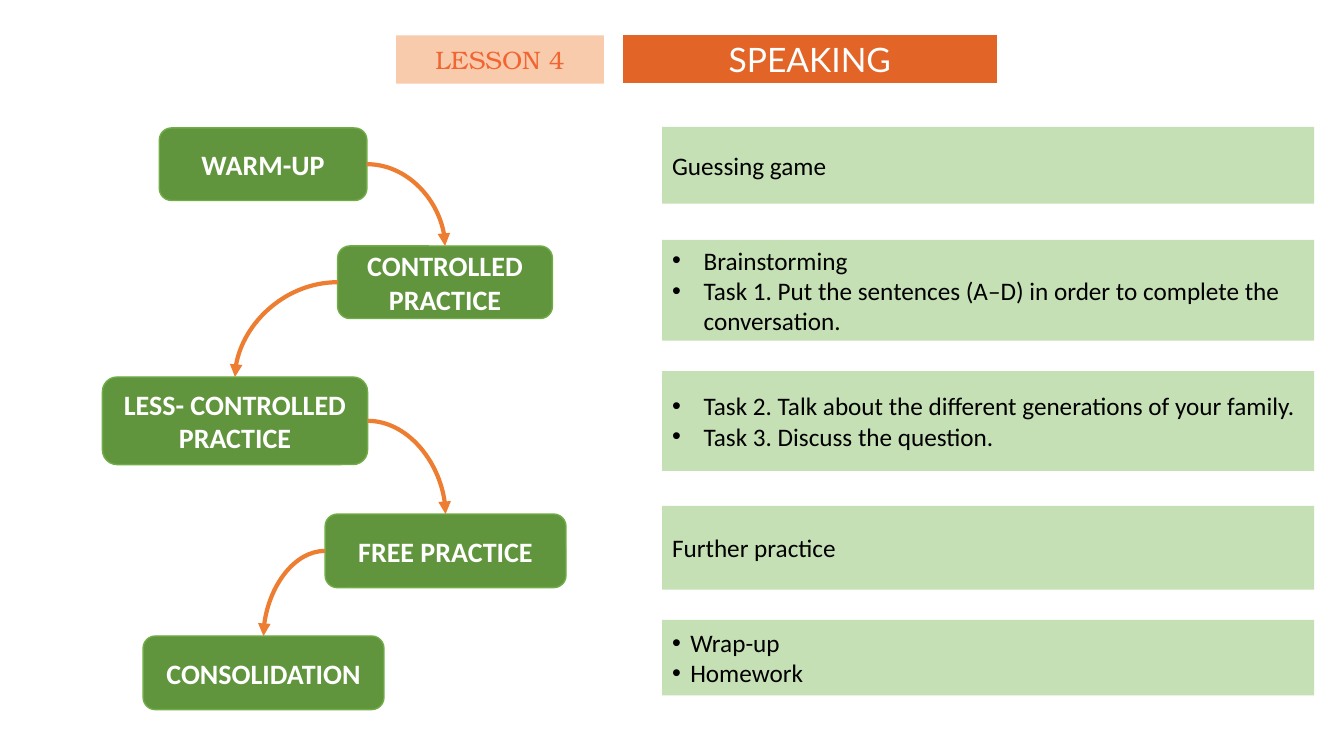
"""Build the Lesson 4 speaking overview slide."""
from dataclasses import dataclass
from itertools import pairwise

from pptx import Presentation
from pptx.dml.color import RGBColor as RGB
from pptx.enum.shapes import MSO_CONNECTOR as CONN, MSO_SHAPE as SHAPE
from pptx.enum.text import MSO_ANCHOR as ANCHOR, MSO_AUTO_SIZE as AUTO, PP_ALIGN as ALIGN
from pptx.oxml.ns import qn
from pptx.shapes.autoshape import Shape
from pptx.slide import Slide
from pptx.util import Pt
from lxml.etree import SubElement


@dataclass(frozen=True)
class Font:
    name: str
    size: float
    color: str
    bold: bool = False


@dataclass(frozen=True)
class Theme:
    step_fill: str = "61953D"
    step_line: str = "70AD47"
    card_fill: str = "C5E0B4"
    arrow: str = "ED7D31"
    title_fill: str = "E36427"
    title_line: str = "FFFFFF"
    lesson_fill: str = "F8CBAD"
    step: Font = Font("Calibri", 20, "FFFFFF", True)
    card: Font = Font("Calibri", 18, "000000")
    title: Font = Font("Lato", 24, "FFFFFF")
    lesson: Font = Font("TeX Gyre Bonum", 18, "F26532")


@dataclass(frozen=True)
class Box:
    left: float
    top: float
    width: float
    height: float


@dataclass(frozen=True)
class Stage:
    name: str
    box: Box
    card_top: float
    card_height: float
    lines: tuple[str, ...]
    hang: float = 0


THEME = Theme()
CARD_LEFT, CARD_WIDTH = 473, 465.8
LESSON_BOX = Box(283, 25.2, 148.3, 34.6)
TITLE_BOX = Box(444.2, 24.5, 268.6, 35.3)
STAGES = (
    Stage("WARM-UP", Box(113.8, 91.4, 148.3, 51.8), 90.7, 54.7, ("Guessing game",)),
    Stage("CONTROLLED PRACTICE", Box(241.2, 175.7, 153.4, 51.8), 171.4, 72,
          ("Brainstorming",
           "Task 1. Put the sentences (A–D) in order to complete the conversation."), 22.5),
    Stage("LESS- CONTROLLED PRACTICE", Box(73.2, 269.3, 189.4, 62.6), 265, 71.3,
          ("Task 2. Talk about the different generations of your family.",
           "Task 3. Discuss the question."), 22.5),
    Stage("FREE PRACTICE", Box(232.2, 367.2, 172.1, 52.6), 361.4, 59.8,
          ("Further practice",)),
    Stage("CONSOLIDATION", Box(102.2, 454.3, 172.1, 52.6), 442.8, 54,
          ("Wrap-up", "Homework"), 13),
)


def paint(s: Shape, fill: str, line: str | None = None, weight: float = 1) -> None:
    """Set the fill and outline of a shape."""
    s.fill.solid()
    s.fill.fore_color.rgb = RGB.from_string(fill)
    if line:
        s.line.color.rgb = RGB.from_string(line)
        s.line.width = Pt(weight)
    else:
        s.line.fill.background()


def write(s: Shape, lines: tuple[str, ...], font: Font,
          align: ALIGN = ALIGN.CENTER, hang: float = 0) -> None:
    """Write one paragraph per line, bulleted when a hanging indent is given."""
    tf = s.text_frame
    tf.word_wrap = True
    tf.auto_size = AUTO.NONE
    tf.vertical_anchor = ANCHOR.MIDDLE
    for i, line in enumerate(lines):
        p = tf.add_paragraph() if i else tf.paragraphs[0]
        p.alignment = align
        p.line_spacing = 1.0
        p.space_before = Pt(0)
        if hang:
            props = p._p.get_or_add_pPr()
            props.set("marL", str(Pt(hang)))
            props.set("indent", str(-Pt(hang)))
            SubElement(props, qn("a:buFont"), typeface="Arial")
            SubElement(props, qn("a:buChar"), char="•")
        r = p.add_run()
        r.text = line
        r.font.name = font.name
        r.font.size = Pt(font.size)
        r.font.bold = font.bold
        r.font.color.rgb = RGB.from_string(font.color)


def add_box(s: Slide, kind: SHAPE, box: Box) -> Shape:
    """Add a preset shape without a shadow."""
    sp = s.shapes.add_shape(kind, Pt(box.left), Pt(box.top), Pt(box.width), Pt(box.height))
    sp.shadow.inherit = False
    return sp


def add_stage(s: Slide, stage: Stage) -> Shape:
    """Add a stage and its activity card, and return the stage shape."""
    card = add_box(s, SHAPE.RECTANGLE,
                   Box(CARD_LEFT, stage.card_top, CARD_WIDTH, stage.card_height))
    paint(card, THEME.card_fill)
    write(card, stage.lines, THEME.card, ALIGN.LEFT, stage.hang)
    step = add_box(s, SHAPE.ROUNDED_RECTANGLE, stage.box)
    paint(step, THEME.step_fill, THEME.step_line)
    write(step, (stage.name,), THEME.step)
    return step


def add_arrow(s: Slide, start: Shape, end: Shape) -> None:
    """Curve an arrow from the side of one stage to the top of the next."""
    c = s.shapes.add_connector(CONN.CURVE, 0, 0, 0, 0)
    rightward = end.left + end.width / 2 > start.left + start.width / 2
    c.begin_connect(start, 3 if rightward else 1)
    c.end_connect(end, 0)
    c.line.color.rgb = RGB.from_string(THEME.arrow)
    c.line.width = Pt(3)
    props = c._element.spPr
    props.find(qn("a:prstGeom")).set("prst", "curvedConnector2")
    SubElement(props.find(qn("a:ln")), qn("a:tailEnd"), type="triangle")
    SubElement(props, qn("a:effectLst"))


def main() -> None:
    """Build and save the slide."""
    prs = Presentation()
    prs.slide_width, prs.slide_height = Pt(960), Pt(540)
    s = prs.slides.add_slide(prs.slide_layouts[5])

    title = s.shapes.title
    title.left, title.top = Pt(TITLE_BOX.left), Pt(TITLE_BOX.top)
    title.width, title.height = Pt(TITLE_BOX.width), Pt(TITLE_BOX.height)
    paint(title, THEME.title_fill, THEME.title_line, 1.5)
    write(title, ("SPEAKING",), THEME.title)

    lesson = add_box(s, SHAPE.RECTANGLE, LESSON_BOX)
    paint(lesson, THEME.lesson_fill)
    write(lesson, ("LESSON 4",), THEME.lesson)

    steps = [add_stage(s, stage) for stage in STAGES]
    for start, end in pairwise(steps):
        add_arrow(s, start, end)
    prs.save("out.pptx")


if __name__ == "__main__":
    main()
